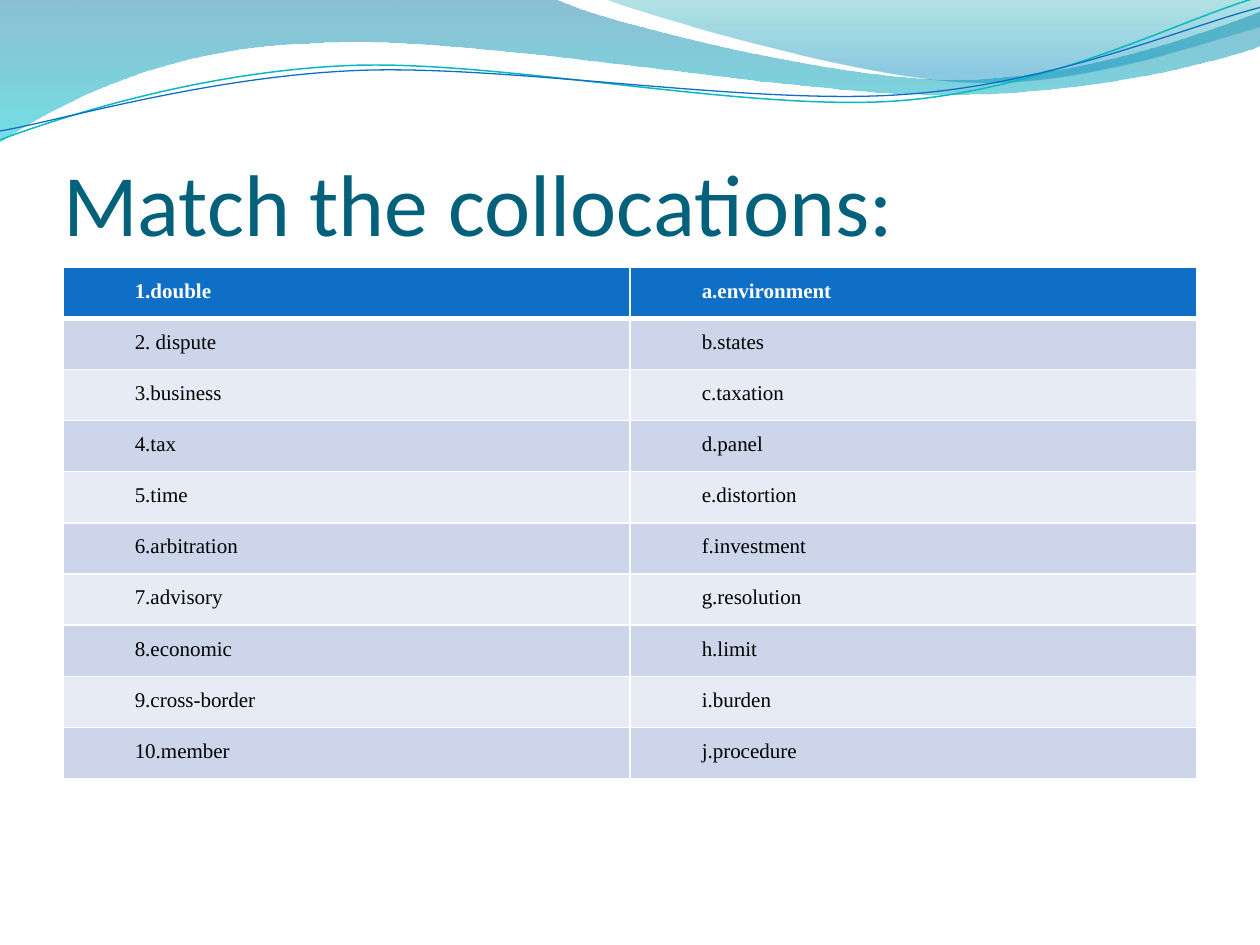
import dataclasses
import math
import typing

import lxml.etree
import pptx
import pptx.dml.color
import pptx.enum.text
import pptx.oxml.ns
import pptx.util

Point = tuple[float, float]
Inches = pptx.util.Inches
qn = pptx.oxml.ns.qn


@dataclasses.dataclass(frozen=True)
class Theme:
    title: str = "04617B"
    header: str = "0F6FC6"
    bands: tuple[str, str] = ("E7EBF5", "CCD5EA")
    white: str = "FFFFFF"
    black: str = "000000"
    title_font: str = "Calibri"
    table_font: str = "Times New Roman"
    title_size: int = 50
    table_size: int = 12


class Stop(typing.NamedTuple):
    position: float
    color: str
    opacity: int


@dataclasses.dataclass(frozen=True)
class Ribbon:
    segments: list[list[Point]]
    stops: tuple[Stop, Stop]


@dataclasses.dataclass(frozen=True)
class Strand:
    segments: list[list[Point]]
    center: Point
    color: str
    width: float


THEME = Theme()
TILT = -2.7
RIBBONS = [
    Ribbon(
        [[(0, 0)], [(4.4, -0.01)],
         [(4.76, 0.17), (6.64, 0.63), (7.58, 0.63)],
         [(8.53, 0.63), (9.58, 0.26), (10, 0.09)], [(10.01, 0.36)],
         [(9.83, 0.44), (8.7, 0.76), (7.46, 0.75)],
         [(6.22, 0.75), (3.82, 0.28), (2.57, 0.34)],
         [(1.29, 0.36), (0.46, 0.83), (-0.01, 1.13)], [(0, 0)]],
        (Stop(0, "0074A1", 45), Stop(1, "00C6CF", 55))),
    Ribbon(
        [[(4.79, -0.01)],
         [(5.09, 0.11), (6.82, 0.62), (7.69, 0.65)],
         [(8.56, 0.69), (9.61, 0.32), (10, 0.21)],
         [(10, 0)], [(4.79, -0.01)]],
        (Stop(0, "00A1A9", 30), Stop(0.8, "008BBF", 45))),
]
STRANDS = [
    Strand(
        [[(0, 1.11)],
         [(0.48, 0.93), (1.58, 0.57), (2.77, 0.52)],
         [(3.95, 0.47), (5.93, 0.89), (7.13, 0.8)],
         [(8.33, 0.71), (9.38, 0.15), (9.98, -0.02)]],
        (4.99, 0.58), "0AB8BF", 0.85),
    Strand(
        [[(0, 1.04)],
         [(0.47, 0.96), (1.64, 0.61), (2.83, 0.56)],
         [(4.03, 0.51), (5.97, 0.84), (7.17, 0.75)],
         [(8.36, 0.67), (9.41, 0.21), (10, 0.06)]],
        (5, 0.59), "0F6FC6", 0.75),
]
PAIRS = [
    ("1.double", "a.environment"),
    ("2. dispute", "b.states"),
    ("3.business", "c.taxation"),
    ("4.tax", "d.panel"),
    ("5.time", "e.distortion"),
    ("6.arbitration", "f.investment"),
    ("7.advisory", "g.resolution"),
    ("8.economic", "h.limit"),
    ("9.cross-border", "i.burden"),
    ("10.member", "j.procedure"),
]


def rgb(color: str) -> pptx.dml.color.RGBColor:
    return pptx.dml.color.RGBColor.from_string(color)


def apply(target: typing.Any, values: dict[str, typing.Any]) -> None:
    for name, value in values.items():
        setattr(target, name, value)


def turn(point: Point, center: Point, degrees: float) -> Point:
    angle = math.radians(degrees)
    dx, dy = point[0] - center[0], point[1] - center[1]
    return (center[0] + dx * math.cos(angle) - dy * math.sin(angle),
            center[1] + dx * math.sin(angle) + dy * math.cos(angle))


def add_curve(shapes: typing.Any, segments: list[list[Point]], close: bool) -> typing.Any:
    points = [(Inches(x), Inches(y)) for segment in segments for x, y in segment]
    builder = shapes.build_freeform(*points[0])
    builder.add_line_segments(points[1:], close=close)
    sp = builder.convert_to_shape()
    sp.shadow.inherit = False
    lines = iter(list(sp.element.iter(qn("a:lnTo"))))
    for segment in segments[1:]:
        parts = [next(lines) for point in segment]
        if len(parts) == 3:
            curve = lxml.etree.Element(qn("a:cubicBezTo"))
            parts[0].addprevious(curve)
            for part in parts:
                curve.append(part[0])
                part.getparent().remove(part)
    return sp


def add_ribbon(shapes: typing.Any, ribbon: Ribbon) -> None:
    sp = add_curve(shapes, ribbon.segments, close=True)
    sp.line.fill.background()
    sp.fill.gradient()
    sp.fill.gradient_angle = 270
    for target, stop in zip(sp.fill.gradient_stops, ribbon.stops):
        target.position = stop.position
        target.color.rgb = rgb(stop.color)
    for color, stop in zip(sp.element.spPr.iter(qn("a:srgbClr")), ribbon.stops):
        lxml.etree.SubElement(color, qn("a:alpha"), val=str(stop.opacity * 1000))


def add_strand(shapes: typing.Any, strand: Strand) -> None:
    level = [[turn(point, strand.center, -TILT) for point in segment]
             for segment in strand.segments]
    sp = add_curve(shapes, level, close=False)
    sp.rotation = TILT
    sp.fill.background()
    sp.line.color.rgb = rgb(strand.color)
    sp.line.width = pptx.util.Pt(strand.width)


def set_borders(cell: typing.Any, widths: dict[str, float]) -> None:
    tc_pr = cell._tc.get_or_add_tcPr()
    for side, width in widths.items():
        ln = lxml.etree.SubElement(tc_pr, qn(f"a:ln{side}"), w=str(pptx.util.Pt(width)))
        fill = lxml.etree.SubElement(ln, qn("a:solidFill"))
        lxml.etree.SubElement(fill, qn("a:srgbClr"), val=THEME.white)


def format_cell(cell: typing.Any, text: str, row: int) -> None:
    header = row == 0
    set_borders(cell, {"L": 1, "R": 1, "T": 3 if row == 1 else 1, "B": 3 if header else 1})
    cell.fill.solid()
    cell.fill.fore_color.rgb = rgb(THEME.header if header else THEME.bands[row % 2])
    margin = Inches(0.07)
    apply(cell, {f"margin_{side}": margin for side in ("left", "top", "right", "bottom")})
    p = cell.text_frame.paragraphs[0]
    apply(p, {"line_spacing": 1.15, "space_after": pptx.util.Pt(8)})
    p._p.get_or_add_pPr().set("marL", str(Inches(0.5)))
    r = p.add_run()
    r.text = text
    apply(r.font, {"name": THEME.table_font, "size": pptx.util.Pt(THEME.table_size),
                   "bold": header})
    r.font.color.rgb = rgb(THEME.white if header else THEME.black)


def add_title(s: typing.Any, text: str) -> None:
    title = s.shapes.title
    title.element.getparent().append(title.element)
    apply(title, {"left": Inches(0.5), "top": Inches(0.77),
                  "width": Inches(9), "height": Inches(1.25)})
    tf = title.text_frame
    apply(tf, {"margin_left": 0, "margin_right": 0, "margin_top": Inches(0.05),
               "margin_bottom": 0, "word_wrap": True,
               "auto_size": pptx.enum.text.MSO_AUTO_SIZE.NONE,
               "vertical_anchor": pptx.enum.text.MSO_ANCHOR.BOTTOM})
    p = tf.paragraphs[0]
    p.alignment = pptx.enum.text.PP_ALIGN.LEFT
    r = p.add_run()
    r.text = text
    apply(r.font, {"name": THEME.title_font, "size": pptx.util.Pt(THEME.title_size)})
    r.font.color.rgb = rgb(THEME.title)


def add_pairs(s: typing.Any, pairs: list[tuple[str, str]]) -> None:
    table = s.shapes.add_table(len(pairs), 2, Inches(0.5), Inches(2.12),
                               Inches(9), Inches(4.06)).table
    for row, pair in enumerate(pairs):
        for column, text in enumerate(pair):
            format_cell(table.cell(row, column), text, row)


def main() -> None:
    prs = pptx.Presentation()
    apply(prs, {"slide_width": Inches(10), "slide_height": Inches(7.5)})
    s = prs.slides.add_slide(prs.slide_layouts.get_by_name("Title Only"))
    for ribbon in RIBBONS:
        add_ribbon(s.shapes, ribbon)
    group = s.shapes.add_group_shape()
    for strand in STRANDS:
        add_strand(group.shapes, strand)
    add_title(s, "Match the collocations:")
    add_pairs(s, PAIRS)
    prs.save("out.pptx")


if __name__ == "__main__":
    main()
